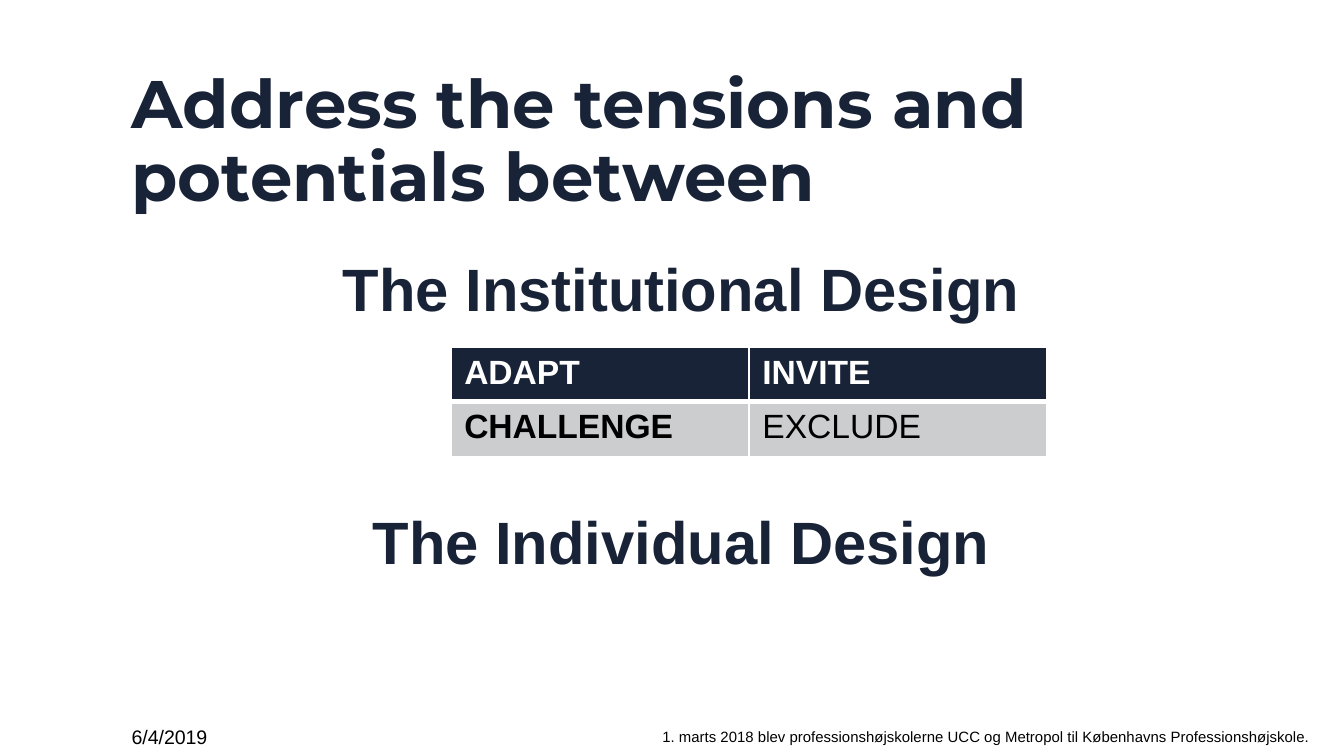
from lxml import etree
from pptx import Presentation
from pptx.dml.color import RGBColor
from pptx.enum.text import MSO_ANCHOR, MSO_AUTO_SIZE, PP_ALIGN
from pptx.oxml.ns import qn
from pptx.util import Pt

PX = 9525  # EMU in one px, 96 px to the inch
LEFT, CENTER, RIGHT = PP_ALIGN.LEFT, PP_ALIGN.CENTER, PP_ALIGN.RIGHT
BOTTOM = MSO_ANCHOR.BOTTOM
NO_AUTOFIT = MSO_AUTO_SIZE.NONE
TITLE_ONLY = 5

COLORS = {"navy": "192337", "grey": "CCCDCE", "white": "FFFFFF", "black": "000000"}
RESPONSES = [["ADAPT", "INVITE"], ["CHALLENGE", "EXCLUDE"]]


def emu(box):
    return [length * PX for length in box]


def add_run(paragraph, text, size, color, bold=False, font="Arial"):
    run = paragraph.add_run()
    run.text = text
    run.font.name = font
    run.font.size = Pt(size)
    run.font.bold = bold
    run.font.color.rgb = RGBColor.from_string(COLORS[color])


def prepare_frame(frame):
    """Wrap the text and remove insets and autofit."""
    frame.word_wrap = True
    frame.auto_size = NO_AUTOFIT
    frame.margin_left = frame.margin_right = 0
    frame.margin_top = frame.margin_bottom = 0
    return frame


def add_frame(slide, box):
    return prepare_frame(slide.shapes.add_textbox(*emu(box)).text_frame)


def place_title(slide, box, text):
    title = slide.shapes.title
    title.left, title.top, title.width, title.height = emu(box)
    frame = prepare_frame(title.text_frame)
    frame.vertical_anchor = BOTTOM
    paragraph = frame.paragraphs[0]
    paragraph.alignment = LEFT
    paragraph.line_spacing = 0.9
    add_run(paragraph, text, 36, "navy", bold=True, font="Montserrat")


def add_designs(slide, box, upper, lower):
    """Set the two headings that stand above and below the table."""
    frame = add_frame(slide, box)
    below = frame.add_paragraph()
    below.space_before = Pt(91)
    for paragraph, text in zip(frame.paragraphs, (upper, lower)):
        paragraph.alignment = CENTER
        paragraph.space_after = Pt(6)
        add_run(paragraph, text, 32, "navy", bold=True)


def add_borders(cell, widths):
    properties = cell._tc.get_or_add_tcPr()
    for side, width in widths.items():
        line = etree.SubElement(properties, qn(f"a:ln{side}"), w=str(Pt(width)))
        fill = etree.SubElement(line, qn("a:solidFill"))
        etree.SubElement(fill, qn("a:srgbClr"), val=COLORS["white"])


def add_responses(slide, box, rows):
    table = slide.shapes.add_table(len(rows), len(rows[0]), *emu(box)).table
    for r, row in enumerate(rows):
        header = r == 0
        for c, text in enumerate(row):
            cell = table.cell(r, c)
            add_borders(cell, {"L": 1, "R": 1, "T": 1 if header else 3, "B": 3 if header else 1})
            cell.fill.solid()
            cell.fill.fore_color.rgb = RGBColor.from_string(COLORS["navy" if header else "grey"])
            add_run(cell.text_frame.paragraphs[0], text, 18,
                    "white" if header else "black", bold=header or c == 0)


def add_footer(slide, box, date, note):
    left, top, width, height = box
    date_line = add_frame(slide, (left, top, 132, height)).paragraphs[0]
    add_run(date_line, date, 10.5, "black")
    note_width = 586
    note_box = (left + width - note_width, top + 2, note_width, 13)
    note_line = add_frame(slide, note_box).paragraphs[0]
    note_line.alignment = RIGHT
    add_run(note_line, note, 8, "black")


def main():
    deck = Presentation()
    deck.slide_width, deck.slide_height = emu((960, 540))
    slide = deck.slides.add_slide(deck.slide_layouts[TITLE_ONLY])
    place_title(slide, (94, 69, 786, 85), "Address the tensions and potentials between")
    add_designs(slide, (94, 180, 786, 312), "The Institutional Design", "The Individual Design")
    add_responses(slide, (322, 248, 426, 78), RESPONSES)
    add_footer(slide, (94, 518, 842, 20), "6/4/2019",
               "1. marts 2018 blev professionshøjskolerne UCC og Metropol "
               "til Københavns Professionshøjskole.")
    deck.save("out.pptx")


if __name__ == "__main__":
    main()
